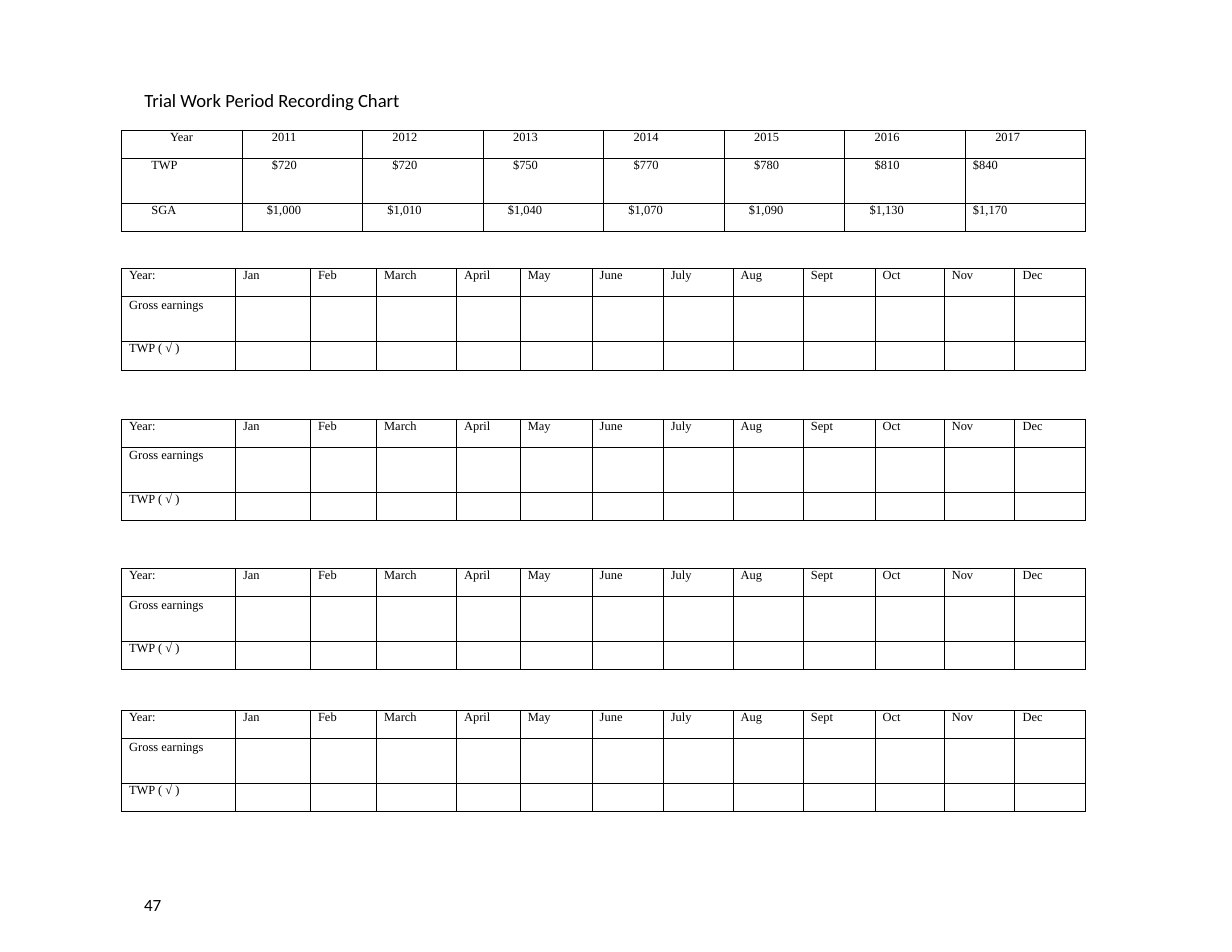
from lxml.etree import SubElement
from pptx import Presentation
from pptx.dml.color import RGBColor
from pptx.enum.text import MSO_ANCHOR, MSO_AUTO_SIZE, PP_ALIGN
from pptx.oxml.ns import qn
from pptx.util import Pt

BLACK = RGBColor(0, 0, 0)
SERIF, SANS = "Times New Roman", "Calibri"
LEFT, WIDTH = 78, 620
ROWS = [18.2, 28.8, 18.2]
PAD = 5

# Yearly limits
LIMITS = [
    ["Year", "2011", "2012", "2013", "2014", "2015", "2016", "2017"],
    ["TWP", "$720", "$720", "$750", "$770", "$780", "$810", "$840"],
    ["SGA", "$1,000", "$1,010", "$1,040", "$1,070", "$1,090", "$1,130", "$1,170"],
]

# Blank record for one year
MONTHS = "Jan Feb March April May June July Aug Sept Oct Nov Dec".split()
RECORD = [["Year:"] + MONTHS,
          ["Gross earnings"] + [""] * 12,
          ["TWP ( √ )"] + [""] * 12]
COLS = [73.3, 48.2, 42.5, 51.4, 41, 46.2, 45.7, 45, 45.1, 46.2, 44.4, 45.5, 45.5]
TOPS = [172.6, 269.3, 365.3, 456.6]


def style(para, size, face, indent=0):
    para.font.size = Pt(size)
    para.font.name = face
    para.font.color.rgb = BLACK
    para.font.bold = False
    props = para._p.get_or_add_pPr()
    props.set("marL", str(Pt(indent)))
    props.set("indent", "0")


def fill_text(shape, text, size, indent):
    frame = shape.text_frame
    frame.text = text
    frame.word_wrap = True
    frame.auto_size = MSO_AUTO_SIZE.NONE
    frame.vertical_anchor = MSO_ANCHOR.TOP
    frame.margin_left = frame.margin_right = 0
    frame.margin_top = frame.margin_bottom = 0
    para = frame.paragraphs[0]
    para.alignment = PP_ALIGN.LEFT
    para.line_spacing = 1.0
    para.space_before = Pt(0)
    style(para, size, SANS, indent)


def border(cell):
    props = cell._tc.get_or_add_tcPr()
    for side in ("lnL", "lnR", "lnT", "lnB"):
        line = SubElement(props, qn("a:" + side), w=str(Pt(0.58)))
        fill = SubElement(line, qn("a:solidFill"))
        SubElement(fill, qn("a:srgbClr"), val=str(BLACK))


def write(cell, text, indent):
    cell.margin_left = cell.margin_right = 0
    cell.margin_top = cell.margin_bottom = 0
    border(cell)
    cell.fill.background()
    para = cell.text_frame.paragraphs[0]
    style(para, 8, SERIF, indent)
    if text:
        para.text = text
    else:
        SubElement(para._p, qn("a:endParaRPr"), sz="800")


def add_grid(slide, top, cols, data, indent):
    frame = slide.shapes.add_table(len(data), len(cols), Pt(LEFT), Pt(top),
                                   Pt(WIDTH), Pt(sum(ROWS)))
    table = frame.table
    table.first_row = table.horz_banding = False
    for col, width in zip(table.columns, cols):
        col.width = Pt(width)
    for row, height in zip(table.rows, ROWS):
        row.height = Pt(height)
    for r, line in enumerate(data):
        for c, text in enumerate(line):
            write(table.cell(r, c), text, indent(r, c))
    return table


def limit_pad(row, col):
    if (row, col) == (0, 0):
        return 0
    if row and col == 7:
        return PAD
    return 16 if row == 2 and col else 19.3


def main():
    deck = Presentation()
    deck.slide_width, deck.slide_height = Pt(792), Pt(612)
    slide = deck.slides.add_slide(deck.slide_layouts[5])

    # Title
    title = slide.shapes.title
    title.left, title.top = Pt(92), Pt(57)
    title.width, title.height = Pt(218), Pt(15)
    fill_text(title, "Trial Work Period Recording Chart", 12, 0.8)

    # Limits table
    limits = add_grid(slide, 83.8, [WIDTH / 8] * 8, LIMITS, limit_pad)
    limits.cell(0, 0).text_frame.paragraphs[0].alignment = PP_ALIGN.CENTER

    # Record tables
    for top in TOPS:
        record = add_grid(slide, top, COLS, RECORD, lambda row, col: PAD)
        record.cell(1, 0).text_frame.paragraphs[0].line_spacing = 1.1

    # Page number
    page = slide.shapes.add_textbox(Pt(90.6), Pt(574.8), Pt(20), Pt(14))
    fill_text(page, "47", 11, 2)

    deck.save("out.pptx")


main()
